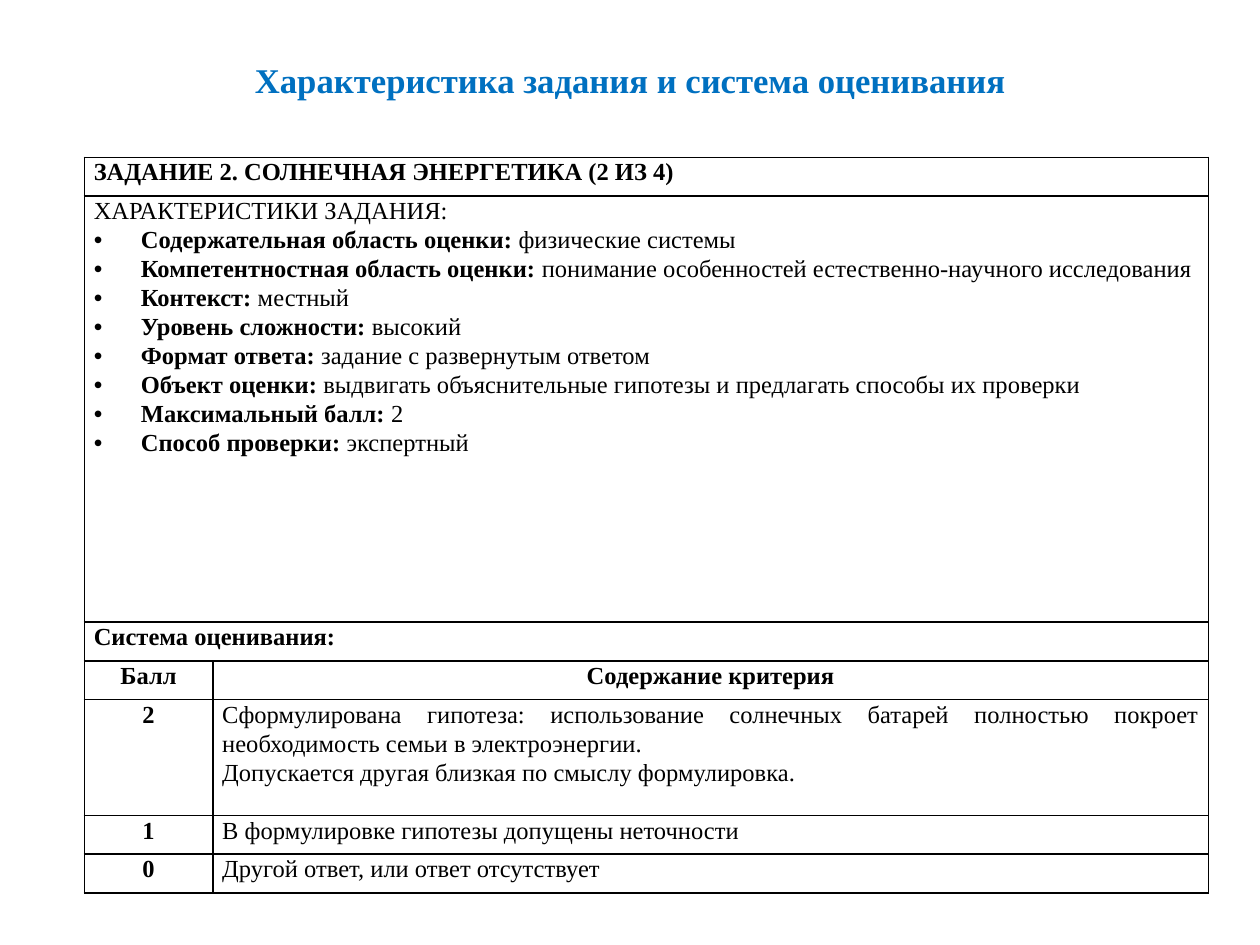
from lxml import etree
from pptx import Presentation
from pptx.dml.color import RGBColor
from pptx.enum.text import MSO_ANCHOR, PP_ALIGN
from pptx.oxml.ns import qn
from pptx.util import Cm, Pt

LEFT, MID, JUST = PP_ALIGN.LEFT, PP_ALIGN.CENTER, PP_ALIGN.JUSTIFY
TOP = MSO_ANCHOR.TOP
BLUE = RGBColor(0x00, 0x70, 0xC0)
BLACK = RGBColor(0x00, 0x00, 0x00)
FONT = "Times New Roman"


def write(frame, lines, align, size=14, color=BLACK):
    """Each line is a pair: bold text, then plain text."""
    for i, pair in enumerate(lines):
        para = frame.paragraphs[0] if i == 0 else frame.add_paragraph()
        para.alignment, para.line_spacing = align, 1.07
        for text, bold in zip(pair, (True, False)):
            if text:
                run = para.add_run()
                run.text = text
                look = {"name": FONT, "size": Pt(size), "bold": bold}
                for key, value in look.items():
                    setattr(run.font, key, value)
                run.font.color.rgb = color


def border(cell):
    props = cell._tc.get_or_add_tcPr()
    for n, side in enumerate(("lnL", "lnR", "lnT", "lnB")):
        line = etree.Element(qn(f"a:{side}"), w=str(Pt(1)))
        fill = etree.SubElement(line, qn("a:solidFill"))
        etree.SubElement(fill, qn("a:srgbClr"), val=str(BLACK))
        props.insert(n, line)


deck = Presentation()
deck.slide_width, deck.slide_height = Cm(25.4), Cm(19.05)
slide = deck.slides.add_slide(deck.slide_layouts[6])

# Title
box = slide.shapes.add_textbox(Cm(1.27), Cm(0.76), Cm(22.86), Cm(3.18))
frame = box.text_frame
style = {"word_wrap": True, "vertical_anchor": TOP, "margin_top": Cm(0.37)}
for key, value in style.items():
    setattr(frame, key, value)
write(frame, [("Характеристика задания и система оценивания", "")], MID, 19.8, BLUE)

# Table content: cells of each row; a single cell spans both columns
traits = [
    ("", "ХАРАКТЕРИСТИКИ ЗАДАНИЯ:"),
    ("Содержательная область оценки:", " физические системы"),
    ("Компетентностная область оценки: ",
     "понимание особенностей естественно-научного исследования"),
    ("Контекст:", " местный"),
    ("Уровень сложности:", " высокий"),
    ("Формат ответа:", " задание с развернутым ответом"),
    ("Объект оценки: ",
     "выдвигать объяснительные гипотезы и предлагать способы их проверки"),
    ("Максимальный балл:", " 2"),
    ("Способ проверки:", " экспертный"),
]
full = [
    ("", "Сформулирована гипотеза: использование солнечных батарей "
         "полностью покроет необходимость семьи в электроэнергии."),
    ("", "Допускается другая близкая по смыслу формулировка."),
]
rows = [
    (0.78, [([("ЗАДАНИЕ 2. СОЛНЕЧНАЯ ЭНЕРГЕТИКА (2 ИЗ 4)", "")], LEFT)]),
    (8.59, [(traits, LEFT)]),
    (0.78, [([("Система оценивания:", "")], LEFT)]),
    (0.78, [([("Балл", "")], MID), ([("Содержание критерия", "")], MID)]),
    (2.34, [([("2", "")], MID), (full, JUST)]),
    (0.78, [([("1", "")], MID),
            ([("", "В формулировке гипотезы допущены неточности")], JUST)]),
    (0.78, [([("0", "")], MID),
            ([("", "Другой ответ, или ответ отсутствует")], JUST)]),
]

# Table
high = sum(row[0] for row in rows)
table = slide.shapes.add_table(
    len(rows), 2, Cm(1.7), Cm(3.17), Cm(22.66), Cm(high)).table
table.first_row = table.horz_banding = False
for col, width in zip(table.columns, (2.59, 20.07)):
    col.width = Cm(width)

pads = {"margin_left": Cm(0.19), "margin_right": Cm(0.19),
        "margin_top": 0, "margin_bottom": 0, "vertical_anchor": TOP}
for r, (height, cells) in enumerate(rows):
    table.rows[r].height = Cm(height)
    for c in range(2):
        cell = table.cell(r, c)
        cell.fill.background()
        border(cell)
        for key, value in pads.items():
            setattr(cell, key, value)
    if len(cells) == 1:
        table.cell(r, 0).merge(table.cell(r, 1))
    for c, (lines, align) in enumerate(cells):
        write(table.cell(r, c).text_frame, lines, align)

# Bullets of the task traits
for para in table.cell(1, 0).text_frame.paragraphs[1:]:
    props = para._p.get_or_add_pPr()
    props.set("marL", str(Cm(0.95)))
    props.set("indent", str(-Cm(0.95)))
    etree.SubElement(props, qn("a:buFont"), typeface="Arial")
    etree.SubElement(props, qn("a:buChar"), char="•")

deck.save("out.pptx")
